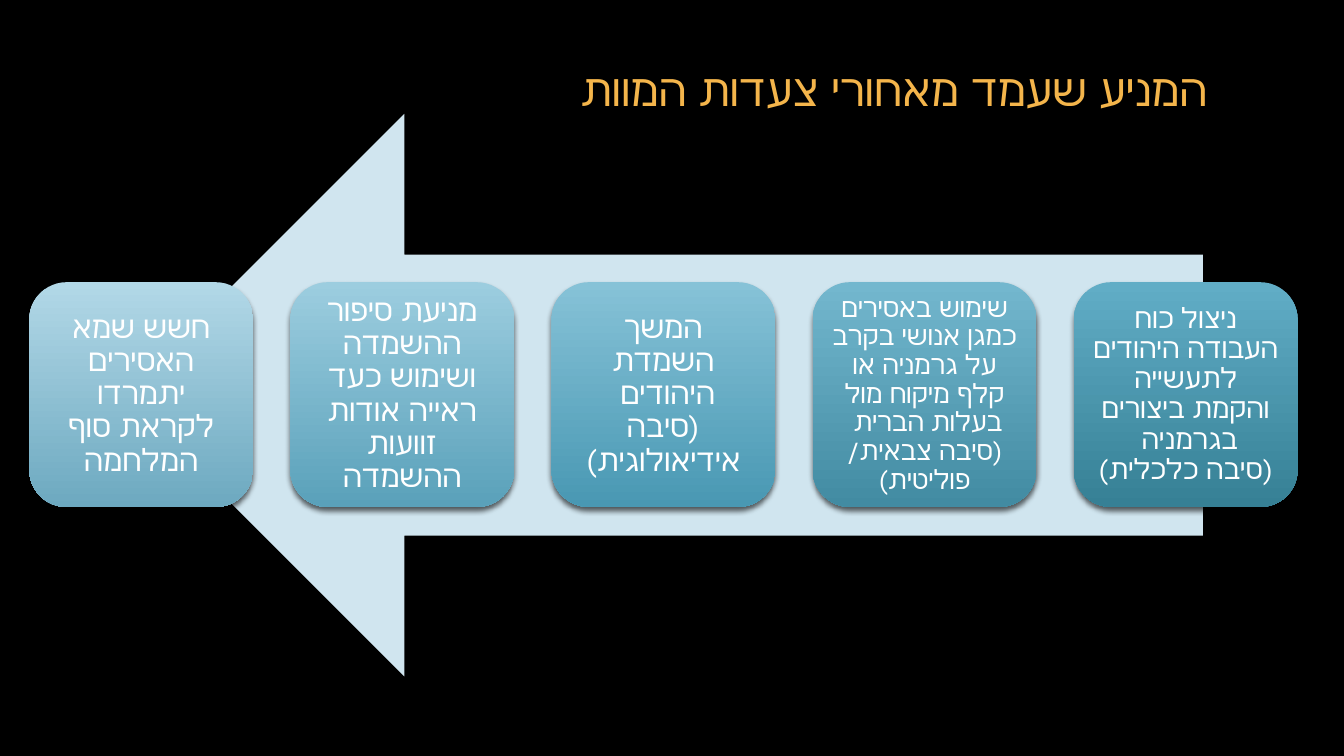
import dataclasses

import pptx
import pptx.dml.color
import pptx.enum.shapes
import pptx.enum.text
import pptx.oxml
import pptx.oxml.ns
import pptx.util

Inches = pptx.util.Inches
Pt = pptx.util.Pt
RGB = pptx.dml.color.RGBColor.from_string
SHAPE = pptx.enum.shapes.MSO_SHAPE
ALIGN = pptx.enum.text.PP_ALIGN


@dataclasses.dataclass(frozen=True)
class Theme:
    font: str = "TeX Gyre Adventor"
    background: str = "000000"
    title: str = "F4B54B"
    arrow: str = "D0E5EF"
    card_text: str = "FFFFFF"
    card_fills: tuple = (
        ("61ADC6", "368095"),
        ("73B7CE", "428BA2"),
        ("86C2D7", "4998B3"),
        ("9CCDDF", "5AA1BA"),
        ("B2D8E7", "6DA9C0"),
    )
    title_size: int = 32
    card_sizes: tuple = (20, 19, 22, 22, 22)


def write_text(tf, text, *, font, size, color, align, rtl=False, spacing=1.0, inset=None):
    tf.word_wrap = True
    tf.vertical_anchor = pptx.enum.text.MSO_ANCHOR.MIDDLE
    if inset is not None:
        tf.margin_left = tf.margin_right = tf.margin_top = tf.margin_bottom = Inches(inset)
    p = tf.paragraphs[0]
    p.text = text
    p.alignment = align
    p.line_spacing = spacing
    if rtl:
        p._p.get_or_add_pPr().set("rtl", "1")
    for r in p.runs:
        r.font.name = font
        r.font.size = Pt(size)
        r.font.color.rgb = RGB(color)
        cs = pptx.oxml.parse_xml(f'<a:cs {pptx.oxml.ns.nsdecls("a")} typeface="{font}"/>')
        r.font._element.append(cs)


def add_shadow(sp):
    sp._element.spPr.append(pptx.oxml.parse_xml(
        f'<a:effectLst {pptx.oxml.ns.nsdecls("a")}>'
        f'<a:outerShdw blurRad="{Pt(4)}" dist="{Pt(3)}" dir="5400000" rotWithShape="0">'
        '<a:srgbClr val="000000"><a:alpha val="60000"/></a:srgbClr>'
        '</a:outerShdw></a:effectLst>'))


class SlideBuilder:
    def __init__(self, s, theme):
        self.s = s
        self.theme = theme
        s.background.fill.solid()
        s.background.fill.fore_color.rgb = RGB(theme.background)

    def title(self, text, *box):
        sp = self.s.shapes.add_textbox(*map(Inches, box))
        write_text(sp.text_frame, text, font=self.theme.font, size=self.theme.title_size,
                   color=self.theme.title, align=ALIGN.RIGHT, rtl=True)

    def arrow(self, *box):
        sp = self.s.shapes.add_shape(SHAPE.LEFT_ARROW, *map(Inches, box))
        sp.shadow.inherit = False
        sp.fill.solid()
        sp.fill.fore_color.rgb = RGB(self.theme.arrow)
        sp.line.fill.background()

    def card(self, text, size, colors, *box):
        sp = self.s.shapes.add_shape(SHAPE.ROUNDED_RECTANGLE, *map(Inches, box))
        sp.fill.gradient()
        sp.fill.gradient_angle = 270
        for stop, position, color in zip(sp.fill.gradient_stops, (0, 1), colors):
            stop.position = position
            stop.color.rgb = RGB(color)
        sp.line.fill.background()
        add_shadow(sp)
        write_text(sp.text_frame, text, font=self.theme.font, size=size,
                   color=self.theme.card_text, align=ALIGN.CENTER, spacing=0.9, inset=0.08)


MOTIVES = (
    "ניצול כוח העבודה היהודים לתעשייה והקמת ביצורים בגרמניה \n(סיבה כלכלית)",
    "שימוש באסירים כמגן אנושי בקרב על גרמניה או קלף מיקוח מול בעלות הברית \n(סיבה צבאית/ פוליטית)",
    "המשך השמדת היהודים \n(סיבה אידיאולוגית)",
    "מניעת סיפור ההשמדה ושימוש כעד ראייה אודות זוועות ההשמדה",
    "חשש שמא האסירים יתמרדו לקראת סוף המלחמה",
)


def main():
    prs = pptx.Presentation()
    prs.slide_width = Inches(13.33)
    prs.slide_height = Inches(7.5)
    theme = Theme()
    slide = SlideBuilder(prs.slides.add_slide(prs.slide_layouts[6]), theme)
    slide.title("המניע שעמד מאחורי צעדות המוות", 1.25, 0.07, 10.83, 1.61)
    slide.arrow(1.22, 1.13, 10.71, 5.58)
    first_left, pitch = 10.65, 2.59
    for i, (text, size, colors) in enumerate(zip(MOTIVES, theme.card_sizes, theme.card_fills)):
        slide.card(text, size, colors, first_left - i * pitch, 2.8, 2.22, 2.23)
    prs.save("out.pptx")


if __name__ == "__main__":
    main()
